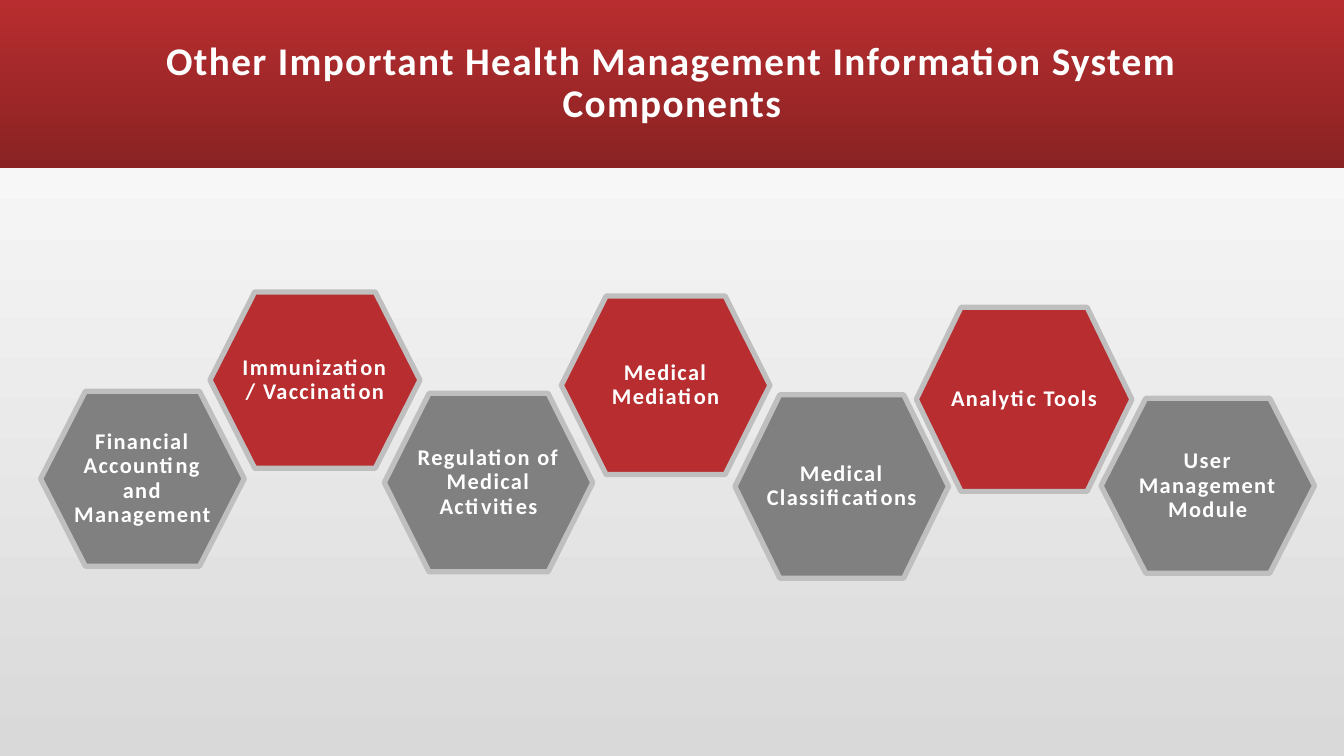
from dataclasses import dataclass
from typing import Any

import pptx
import pptx.dml.color
import pptx.enum.shapes
import pptx.enum.text
import pptx.util

Pt = pptx.util.Pt
RGB = pptx.dml.color.RGBColor
RED = RGB(0xB8, 0x2D, 0x2F)
DARK = RGB(0x8A, 0x22, 0x23)
GREY = RGB(0x80, 0x80, 0x80)
SILVER = RGB(0xBF, 0xBF, 0xBF)
PALE = RGB(0xD9, 0xD9, 0xD9)
WHITE = RGB(0xFF, 0xFF, 0xFF)
WIDTH, HEIGHT, BAND = 960, 540, 120
CUT = 32


@dataclass
class Hex:
    text: str
    left: float
    top: float
    width: float
    height: float
    color: RGB


CELLS = [
    Hex("Regulation of Medical Activities", 274.5, 281, 149, 127.5, GREY),
    Hex("Medical Mediation", 401, 211.5, 149, 127.5, RED),
    Hex("Immunization/ Vaccination", 150, 208.5, 150, 126, RED),
    Hex("User Management Module", 786.5, 284.5, 152.5, 125, GREY),
    Hex("Medical Classifications", 525, 282, 152.5, 131, GREY),
    Hex("Analytic Tools", 654.5, 219.5, 154, 131.5, RED),
    Hex("Financial Accounting and Management", 29, 279.5, 145.5, 125, GREY),
]


def apply(target: Any, values: dict[str, Any]) -> None:
    for name, value in values.items():
        setattr(target, name, value)


def shade(fill: Any, first: RGB, last: RGB, angle: float) -> None:
    fill.gradient()
    fill.gradient_angle = angle
    for stop, color, place in zip(fill.gradient_stops, (first, last), (0, 1)):
        stop.color.rgb = color
        stop.position = place


def write(shape: Any, text: str, size: float, side: float, edge: float) -> None:
    frame = shape.text_frame
    apply(frame, {
        "word_wrap": True,
        "auto_size": pptx.enum.text.MSO_AUTO_SIZE.NONE,
        "vertical_anchor": pptx.enum.text.MSO_ANCHOR.MIDDLE,
        "margin_left": Pt(side), "margin_right": Pt(side),
        "margin_top": Pt(edge), "margin_bottom": Pt(edge),
    })
    line = frame.paragraphs[0]
    line.text = text
    apply(line, {"alignment": pptx.enum.text.PP_ALIGN.CENTER, "line_spacing": 0.9})
    for run in line.runs:
        apply(run.font, {"name": "Calibri", "size": Pt(size), "bold": True})
        run.font.color.rgb = WHITE
        run.font._element.set("spc", "100")


def draw(shapes: Any, cell: Hex) -> None:
    right, base = cell.left + cell.width, cell.top + cell.height
    mid = cell.top + cell.height / 2
    points = [
        (cell.left + CUT, cell.top), (right - CUT, cell.top), (right, mid),
        (right - CUT, base), (cell.left + CUT, base),
    ]
    pen = shapes.build_freeform(Pt(cell.left), Pt(mid))
    pen.add_line_segments([(Pt(x), Pt(y)) for x, y in points], close=True)
    shape = pen.convert_to_shape()
    shape.shadow.inherit = False
    shape.fill.solid()
    shape.fill.fore_color.rgb = cell.color
    shape.line.color.rgb = SILVER
    shape.line.width = Pt(3.75)
    write(shape, cell.text, 16, 20, 18)


def main() -> None:
    deck = pptx.Presentation()
    apply(deck, {"slide_width": Pt(WIDTH), "slide_height": Pt(HEIGHT)})
    slide = deck.slides.add_slide(deck.slide_layouts[6])
    shade(slide.background.fill, PALE, WHITE, 90)
    band = slide.shapes.add_shape(
        pptx.enum.shapes.MSO_SHAPE.RECTANGLE, 0, 0, Pt(WIDTH), Pt(BAND))
    band.shadow.inherit = False
    band.line.fill.background()
    shade(band.fill, RED, DARK, 270)
    title = slide.shapes.add_textbox(Pt(84), 0, Pt(792), Pt(BAND))
    write(title, "Other Important Health Management Information System\vComponents",
          28, 7.2, 3.6)
    for cell in CELLS:
        draw(slide.shapes, cell)
    deck.save("out.pptx")


if __name__ == "__main__":
    main()
